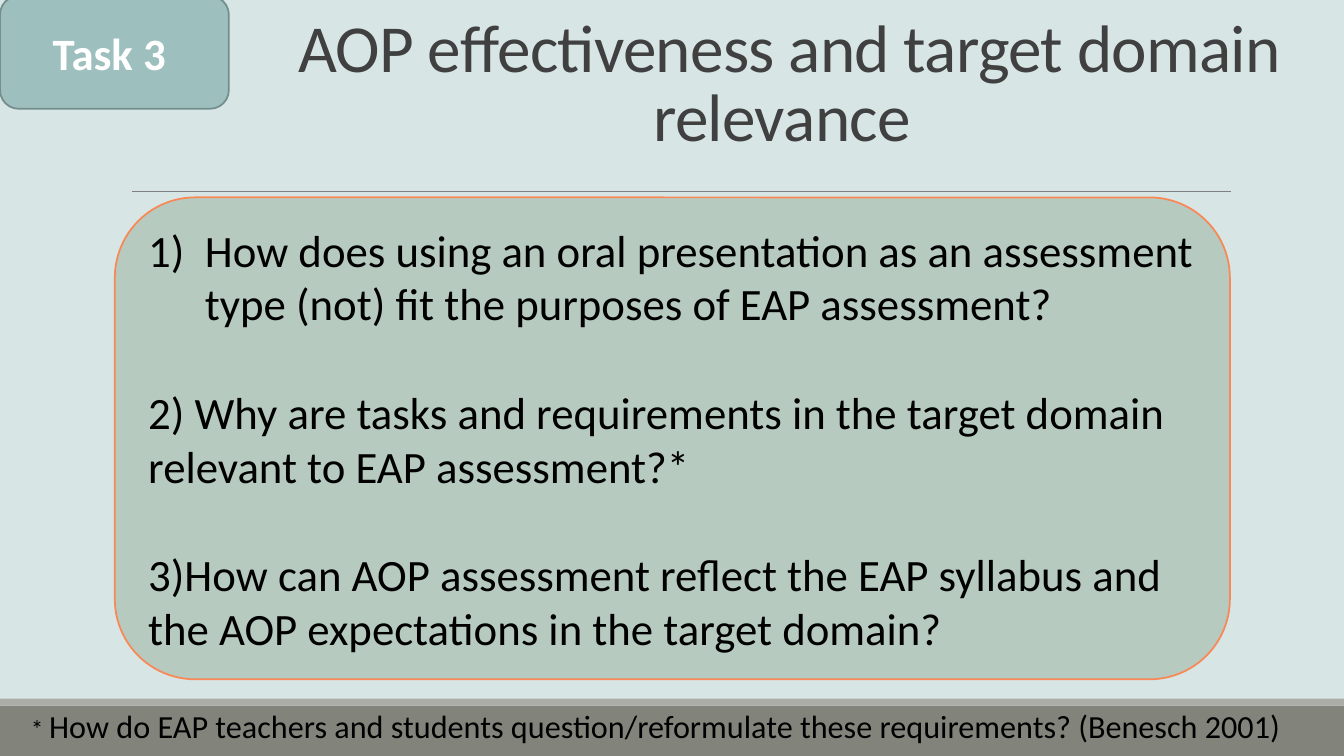
from lxml.etree import SubElement
from pptx import Presentation
from pptx.dml.color import RGBColor
from pptx.enum.shapes import MSO_CONNECTOR, MSO_SHAPE
from pptx.enum.text import MSO_ANCHOR as Anchor, MSO_AUTO_SIZE as AutoSize, PP_ALIGN as Align
from pptx.oxml.ns import qn
from pptx.util import Pt

COLORS = {
    "background": "D8E5E5", "band": "82847C", "strip": "ACADA8", "rule": "808080",
    "title": "404040", "badge": "9DBFBE", "badge_edge": "748D8D", "white": "FFFFFF",
    "panel": "B6CABF", "panel_edge": "F88856", "black": "000000",
}
FRAME = {"word_wrap": True, "auto_size": AutoSize.NONE}
QUESTIONS = [
    "How does using an oral presentation as an assessment type (not) fit the purposes of EAP assessment?",
    "2) Why are tasks and requirements in the target domain relevant to EAP assessment?*",
    "3)How can AOP assessment reflect the EAP syllabus and the AOP expectations in the target domain?",
]


def color(name):
    return RGBColor.from_string(COLORS[name])


def apply(target, formats):
    for key, value in formats.items():
        setattr(target, key, value)


def place(box):
    return [Pt(length) for length in box]


def write(paragraph, text, size, ink, bold=False):
    run = paragraph.add_run()
    run.text = text
    apply(run.font, {"name": "Calibri", "size": Pt(size), "bold": bold})
    run.font.color.rgb = color(ink)
    return run


def add_block(slide, kind, box, fill, edge=None):
    block = slide.shapes.add_shape(kind, *place(box))
    block.shadow.inherit = False
    block.fill.solid()
    block.fill.fore_color.rgb = color(fill)
    if edge:
        block.line.color.rgb = color(edge)
        block.line.width = Pt(1.25)
    else:
        block.line.fill.background()
    apply(block.text_frame, {**FRAME, "vertical_anchor": Anchor.MIDDLE})
    return block


def add_rule(slide, left, top, width):
    rule = slide.shapes.add_connector(
        MSO_CONNECTOR.STRAIGHT, *place((left, top, left + width, top)))
    rule.line.color.rgb = color("rule")
    rule.line.width = Pt(0.5)
    SubElement(rule.element.spPr, qn("a:effectLst"))


def add_heading(slide, left, top, width, height):
    heading = slide.shapes.title
    apply(heading, dict(zip(("left", "top", "width", "height"),
                            place((left, top, width, height)))))
    apply(heading.text_frame, {**FRAME, "vertical_anchor": Anchor.BOTTOM})
    paragraph = heading.text_frame.paragraphs[0]
    apply(paragraph, {"alignment": Align.CENTER, "line_spacing": 0.85})
    run = write(paragraph, "AOP effectiveness and target domain relevance ", 48, "title")
    run.font.element.set("spc", "-50") if hasattr(run.font, "element") else \
        run._r.get_or_add_rPr().set("spc", "-50")


def add_badge(slide, *box):
    badge = add_block(slide, MSO_SHAPE.ROUNDED_RECTANGLE, box, "badge", "badge_edge")
    paragraph = badge.text_frame.paragraphs[0]
    paragraph.alignment = Align.CENTER
    write(paragraph, "Task 3 ", 32, "white", bold=True)


def add_questions(slide, *box):
    panel = add_block(slide, MSO_SHAPE.ROUNDED_RECTANGLE, box, "panel", "panel_edge")
    frame = panel.text_frame
    for index, question in enumerate(QUESTIONS):
        paragraph = frame.add_paragraph() if index else frame.paragraphs[0]
        apply(paragraph, {"alignment": Align.LEFT, "space_before": Pt(39 if index else 0)})
        write(paragraph, question, 32, "black")
    numbered = frame.paragraphs[0]._p.get_or_add_pPr()
    numbered.set("marL", str(Pt(40.5)))
    numbered.set("indent", str(-Pt(40.5)))
    SubElement(numbered, qn("a:buFont"), typeface="+mj-lt")
    SubElement(numbered, qn("a:buAutoNum"), type="arabicParenR")


def add_footer(slide, left, top, width, height):
    strip_height = 5
    add_block(slide, MSO_SHAPE.RECTANGLE,
              (left, top + strip_height, width, height - strip_height), "band")
    add_block(slide, MSO_SHAPE.RECTANGLE, (left, top, width, strip_height), "strip")
    footnote = slide.shapes.add_textbox(*place((left + 15, top + 2, width - 39, 35)))
    apply(footnote.text_frame, FRAME)
    paragraph = footnote.text_frame.paragraphs[0]
    write(paragraph, "* ", 18, "black")
    write(paragraph, "How do EAP teachers and students question/reformulate these requirements? (Benesch 2001)",
          23, "black")


def build_task_slide(deck, width, height):
    slide = deck.slides.add_slide(deck.slide_layouts[5])
    slide.background.fill.solid()
    slide.background.fill.fore_color.rgb = color("background")
    add_footer(slide, 0, height - 41, width, 41)
    add_rule(slide, 94.3, 136.8, 784.8)
    add_heading(slide, 167.8, 0, 792, 114.5)
    add_badge(slide, 0, -2.9, 163.5, 80.6)
    add_questions(slide, 82, 141, 796.5, 344.2)


def main():
    deck = Presentation()
    width, height = 960, 540
    apply(deck, {"slide_width": Pt(width), "slide_height": Pt(height)})
    build_task_slide(deck, width, height)
    deck.save("out.pptx")


if __name__ == "__main__":
    main()
